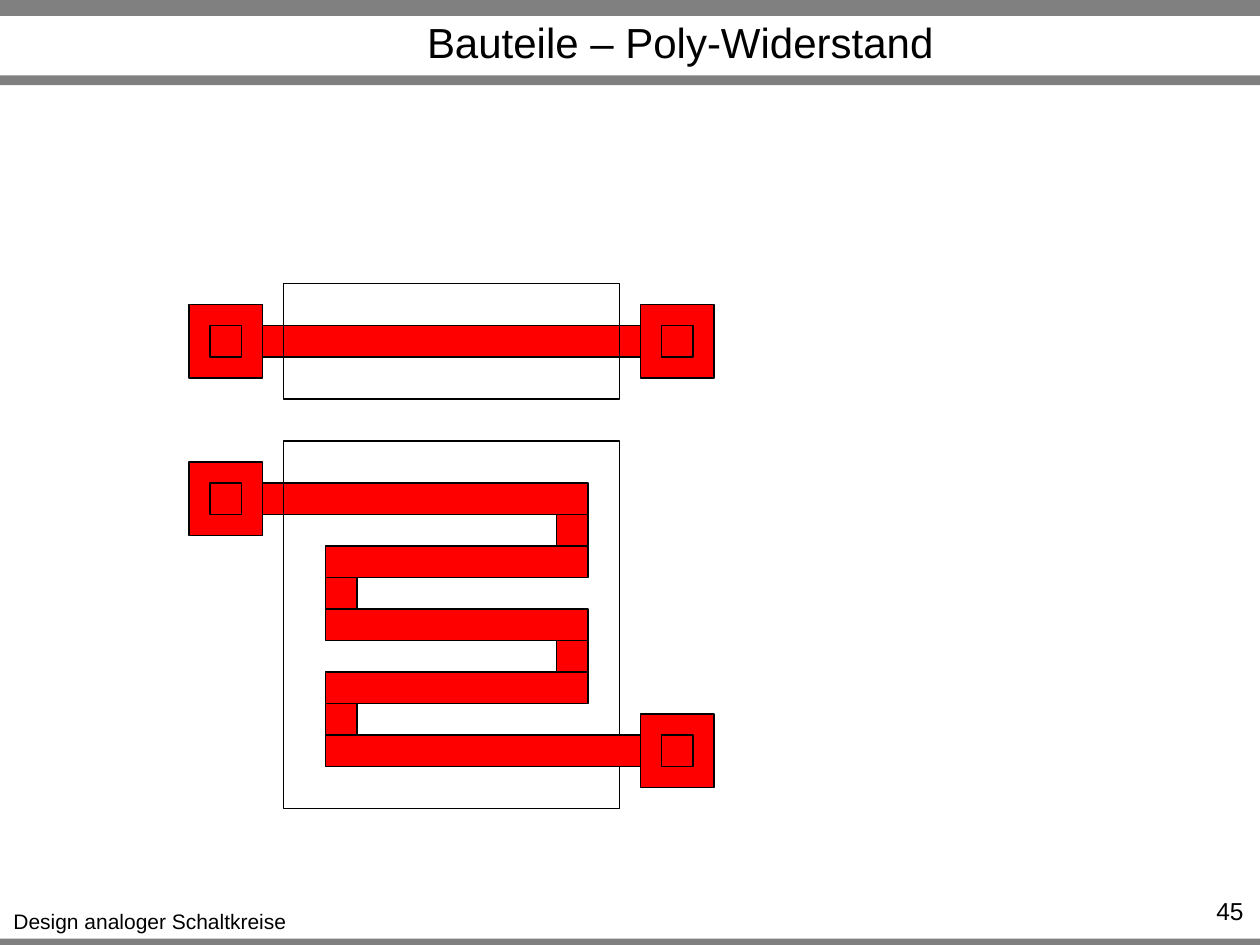
from typing import NamedTuple, Optional

import pptx
import pptx.dml.color
import pptx.enum.shapes
import pptx.enum.text
import pptx.util

Cm = pptx.util.Cm
RGBColor = pptx.dml.color.RGBColor
PP_ALIGN = pptx.enum.text.PP_ALIGN
MSO_ANCHOR = pptx.enum.text.MSO_ANCHOR

BLACK = RGBColor(0x00, 0x00, 0x00)
GRAY = RGBColor(0x80, 0x80, 0x80)
POLY_RED = RGBColor(0xFF, 0x00, 0x00)

GRID = 2.54 / 12  # layout grid in cm
TRACK = 3  # track width in grid units
PAD = 7
CONTACT_INSET = 2
PAD_LEFT, PAD_RIGHT = 18, 61
BODY_LEFT, BODY_WIDTH = 27, 32
MEANDER_LEFT, MEANDER_RIGHT = 31, 56
SLIDE_WIDTH = 25.4


class Box(NamedTuple):
    left: float
    top: float
    width: float
    height: float


class Label(NamedTuple):
    text: str
    box: Box
    size: int
    align: PP_ALIGN
    anchor: MSO_ANCHOR = MSO_ANCHOR.TOP
    wrap: bool = True


BARS = [
    Box(0, 18.92, SLIDE_WIDTH, 0.2),
    Box(0, 0, SLIDE_WIDTH, 0.32),
    Box(0, 1.52, SLIDE_WIDTH, 0.2),
]
LABELS = [
    Label("Design analoger Schaltkreise", Box(0, 18.2, 6.05, 0.77), 12,
          PP_ALIGN.CENTER, wrap=False),
    Label("Bauteile – Poly-Widerstand", Box(3.3, 0.36, 20.83, 0.97), 24,
          PP_ALIGN.CENTER, MSO_ANCHOR.MIDDLE),
    Label("45", Box(23.11, 17.93, 2.21, 0.61), 14, PP_ALIGN.RIGHT),
]


def draw_rectangle(slide, box: Box, fill: Optional[RGBColor],
                   line: Optional[RGBColor]) -> None:
    rectangle = slide.shapes.add_shape(
        pptx.enum.shapes.MSO_SHAPE.RECTANGLE, *map(Cm, box))
    rectangle.shadow.inherit = False
    if fill is None:
        rectangle.fill.background()
    else:
        rectangle.fill.solid()
        rectangle.fill.fore_color.rgb = fill
    if line is None:
        rectangle.line.fill.background()
    else:
        rectangle.line.color.rgb = line
        rectangle.line.width = pptx.util.Pt(0.75)


def draw_label(slide, label: Label) -> None:
    frame = slide.shapes.add_textbox(*map(Cm, label.box)).text_frame
    frame.word_wrap = label.wrap
    frame.vertical_anchor = label.anchor
    frame.text = label.text
    paragraph = frame.paragraphs[0]
    paragraph.alignment = label.align
    font = paragraph.runs[0].font
    font.name = "Arial"
    font.size = pptx.util.Pt(label.size)
    font.color.rgb = BLACK


def draw_layer(slide, area: Box, fill: Optional[RGBColor] = None) -> None:
    """Draw an outlined layout area given in grid units."""
    draw_rectangle(slide, Box(*(GRID * units for units in area)), fill, BLACK)


def draw_track(slide, left: int, right: int, top: int) -> None:
    draw_layer(slide, Box(left, top, right - left, TRACK), POLY_RED)


def draw_body(slide, top: int, height: int) -> None:
    draw_layer(slide, Box(BODY_LEFT, top, BODY_WIDTH, height))


def draw_pad(slide, left: int, track_top: int) -> None:
    """Draw a pad with its contact, centred on a track."""
    draw_layer(slide, Box(left, track_top - CONTACT_INSET, PAD, PAD), POLY_RED)
    draw_layer(slide, Box(left + CONTACT_INSET, track_top, TRACK, TRACK))


def draw_straight_resistor(slide, top: int) -> None:
    draw_track(slide, PAD_LEFT + PAD, PAD_RIGHT, top)
    draw_body(slide, top - 4, 11)
    for left in (PAD_LEFT, PAD_RIGHT):
        draw_pad(slide, left, top)


def draw_meander_resistor(slide, top: int, rows: int) -> None:
    pitch = 2 * TRACK
    last_top = top + (rows - 1) * pitch
    draw_track(slide, PAD_LEFT + PAD, MEANDER_RIGHT, top)
    draw_body(slide, top - 4, last_top - top + 11)
    for row in range(1, rows):
        row_top = top + row * pitch
        link_left = MEANDER_RIGHT - TRACK if row % 2 else MEANDER_LEFT
        draw_track(slide, link_left, link_left + TRACK, row_top - TRACK)
        row_right = PAD_RIGHT if row == rows - 1 else MEANDER_RIGHT
        draw_track(slide, MEANDER_LEFT, row_right, row_top)
    draw_pad(slide, PAD_LEFT, top)
    draw_pad(slide, PAD_RIGHT, last_top)


def main() -> None:
    presentation = pptx.Presentation()
    presentation.slide_width = Cm(SLIDE_WIDTH)
    presentation.slide_height = Cm(19.05)
    slide = presentation.slides.add_slide(presentation.slide_layouts[6])
    for bar in BARS:
        draw_rectangle(slide, bar, GRAY, None)
    for label in LABELS:
        draw_label(slide, label)
    draw_straight_resistor(slide, top=31)
    draw_meander_resistor(slide, top=46, rows=5)
    presentation.save("out.pptx")


if __name__ == "__main__":
    main()
